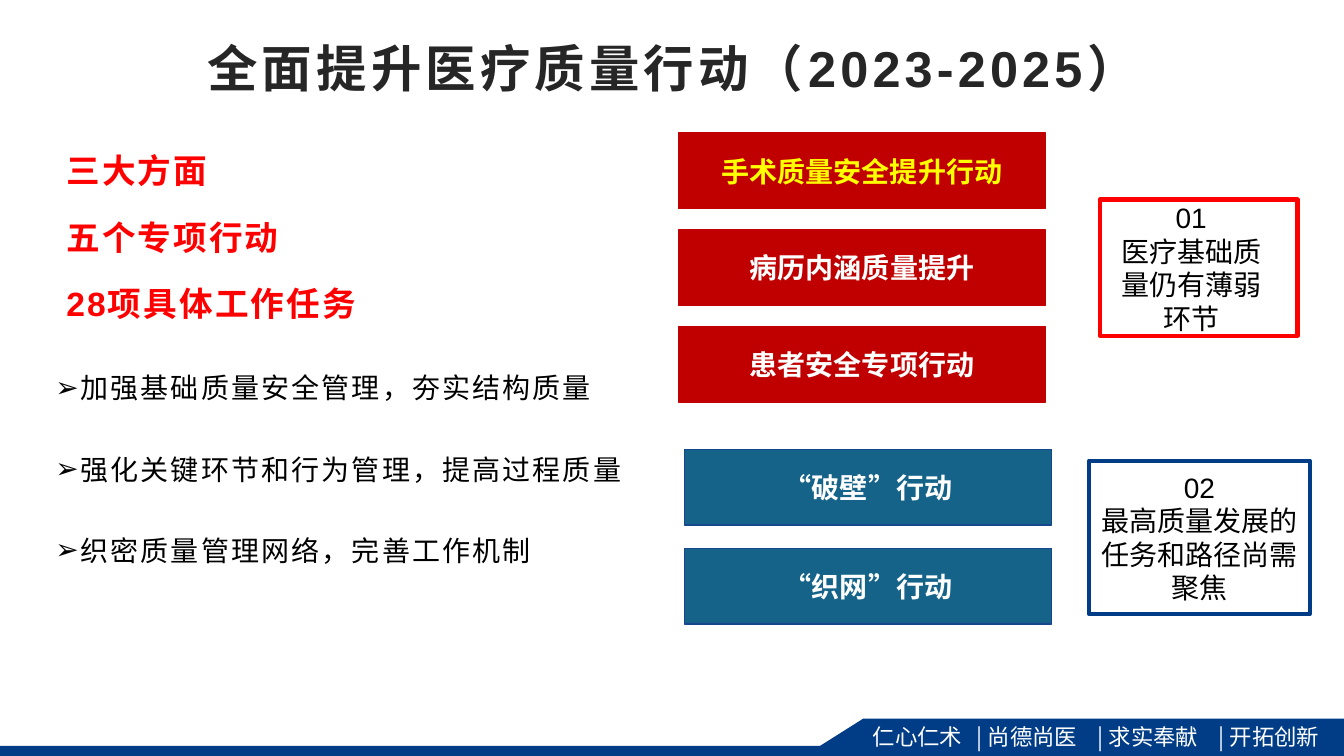
import pptx
import pptx.util
import pptx.dml.color
import pptx.enum.shapes
import pptx.enum.text
import pptx.oxml
import pptx.oxml.ns

WIDE, HIGH = 13.33, 7.5
NAVY, RED, DARK, TEAL = "003D86", "FF0000", "C00000", "156389"
WHITE, BLACK = "FFFFFF", "000000"
KIND = pptx.enum.shapes.MSO_SHAPE
ALIGN = pptx.enum.text.PP_ALIGN
MIDDLE = pptx.enum.text.MSO_ANCHOR.MIDDLE
inch = pptx.util.Inches


def paint(part, color):
    """Give a fill, line or font the colour of a hex string."""
    if hasattr(part, "solid"):
        part.solid()
        part = part.fore_color
    else:
        part = part.color
    part.rgb = pptx.dml.color.RGBColor.from_string(color)


def style(para, size, color, bold=False, face="Arial", space=0):
    for run in para.runs:
        run.font.size = pptx.util.Pt(size)
        run.font.bold = bold
        run.font.name = face
        paint(run.font, color)
        if space:
            run.font._element.set("spc", str(int(space * 100)))


def indent(para, left=0, first=0, right=0):
    props = para._p.get_or_add_pPr()
    for key, size in (("marL", left), ("indent", first), ("marR", right)):
        props.set(key, str(int(inch(size))))


def extend(para, xml):
    """Append a child, such as a bullet or tab list, to the paragraph settings."""
    space = pptx.oxml.ns.nsdecls("a")
    node = pptx.oxml.parse_xml(xml.replace("NS", space, 1))
    para._p.get_or_add_pPr().append(node)


def block(slide, box, fill=None, line=None, width=1, kind=KIND.RECTANGLE):
    shape = slide.shapes.add_shape(kind, *map(inch, box))
    shape.shadow.inherit = False
    if fill:
        paint(shape.fill, fill)
    else:
        shape.fill.background()
    if line:
        paint(shape.line, line)
        shape.line.width = pptx.util.Pt(width)
    else:
        shape.line.fill.background()
    shape.text_frame.word_wrap = True
    return shape


def label(shape, text, size, color, bold=False):
    frame = shape.text_frame
    frame.text = text
    frame.vertical_anchor = MIDDLE
    for para in frame.paragraphs:
        para.alignment = ALIGN.CENTER
        style(para, size, color, bold)


def footer(slide, box, words):
    left, top, width, height = box
    block(slide, (0, HIGH - 0.1, left + 1.48, 0.1), NAVY)
    run, rise = 0.57, height - 0.01
    slope = block(slide, (left - run / 2 - rise / 2, top + rise / 2 - run / 2,
                          rise, run), NAVY, kind=KIND.RIGHT_TRIANGLE)
    slope.rotation = 270
    band = block(slide, box, NAVY)
    band.text_frame.text = "\t| ".join(words)
    band.text_frame.vertical_anchor = pptx.enum.text.MSO_ANCHOR.TOP
    para = band.text_frame.paragraphs[0]
    para.alignment = ALIGN.LEFT
    style(para, 16, WHITE, face="Noto Sans CJK JP")
    stops = "".join(f'<a:tab pos="{int(inch(1.03 + 1.2 * step))}" algn="l"/>'
                    for step in range(len(words) - 1))
    extend(para, f"<a:tabLst NS>{stops}</a:tabLst>")


def title(slide, box, text):
    shape = slide.shapes.add_textbox(*map(inch, box))
    shape.text_frame.word_wrap = True
    label(shape, text, 36, "262626", True)
    style(shape.text_frame.paragraphs[0], 36, "262626", True, space=3)


def outline(slide, box, heads, points):
    frame = slide.shapes.add_textbox(*map(inch, box)).text_frame
    frame.word_wrap = True
    frame.text = "\n".join(heads + points)
    for spot, para in enumerate(frame.paragraphs):
        para.space_after = pptx.util.Pt(10)
        if spot < len(heads):
            para.line_spacing = 1.3
            indent(para, 0.11)
            style(para, 24, RED, True, space=1.5)
        else:
            para.line_spacing = 2.0
            indent(para, 0.25, -0.25)
            extend(para, '<a:buFont NS typeface="Arial"/>')
            extend(para, '<a:buChar NS char="➢"/>')
            style(para, 20, BLACK, space=1.5)


def stack(slide, box, step, names, fill, line, first=WHITE):
    """Stack equal bars downward from the box of the top one."""
    left, top, width, height = box
    for row, name in enumerate(names):
        bar = block(slide, (left, top + row * step, width, height), fill, line)
        label(bar, name, 20, WHITE if row else first, True)


def note(slide, box, number, text, color, shift=0):
    shape = block(slide, box, line=color, width=3)
    label(shape, f"{number}\n{text}", 20, BLACK)
    indent(shape.text_frame.paragraphs[0], right=shift)


def main():
    deck = pptx.Presentation()
    deck.slide_width, deck.slide_height = inch(WIDE), inch(HIGH)
    slide = deck.slides.add_slide(deck.slide_layouts[6])
    footer(slide, (8.56, 7.13, WIDE - 8.56, 0.37),
           ["仁心仁术", "尚德尚医", "求实奉献", "开拓创新"])
    title(slide, (0.67, 0.28, 12, 0.77), "全面提升医疗质量行动（2023-2025）")
    outline(slide, (0.45, 1.32, 5.91, 5.2),
            ["三大方面", "五个专项行动", "28项具体工作任务"],
            ["加强基础质量安全管理，夯实结构质量",
             "强化关键环节和行为管理，提高过程质量",
             "织密质量管理网络，完善工作机制"])
    stack(slide, (6.73, 1.32, 3.64, 0.75), 0.96,
          ["手术质量安全提升行动", "病历内涵质量提升", "患者安全专项行动"],
          DARK, DARK, "FFFF00")
    stack(slide, (6.79, 4.46, 3.64, 0.75), 0.98,
          ["“破壁”行动", "“织网”行动"], TEAL, "16468D")
    note(slide, (10.8, 4.57, 2.19, 1.52), "02",
         "最高质量发展的任务和路径尚需聚焦", NAVY)
    note(slide, (10.91, 1.98, 1.96, 1.35), "01",
         "医疗基础质量仍有薄弱环节", RED, 0.15)
    deck.save("out.pptx")


if __name__ == "__main__":
    main()
